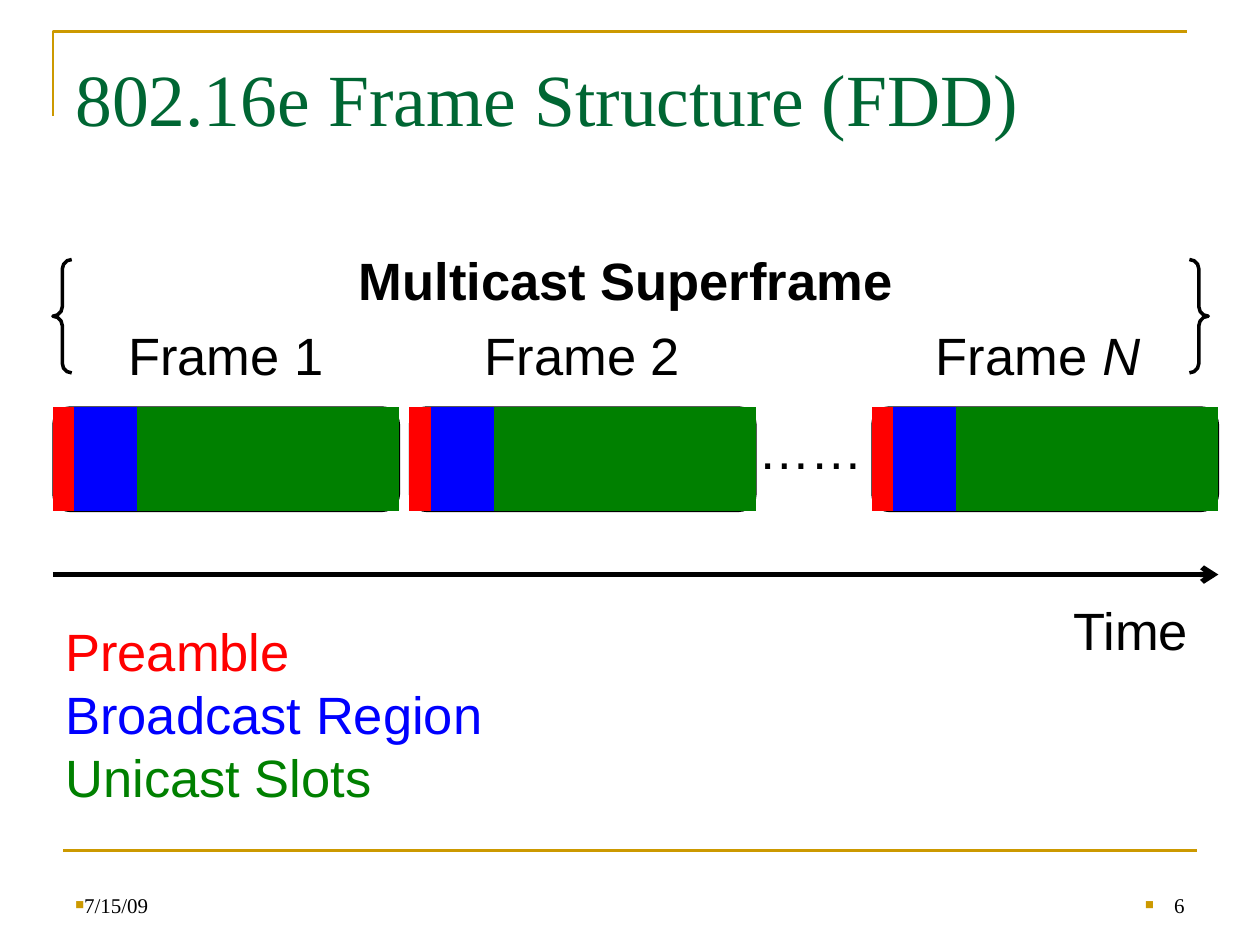
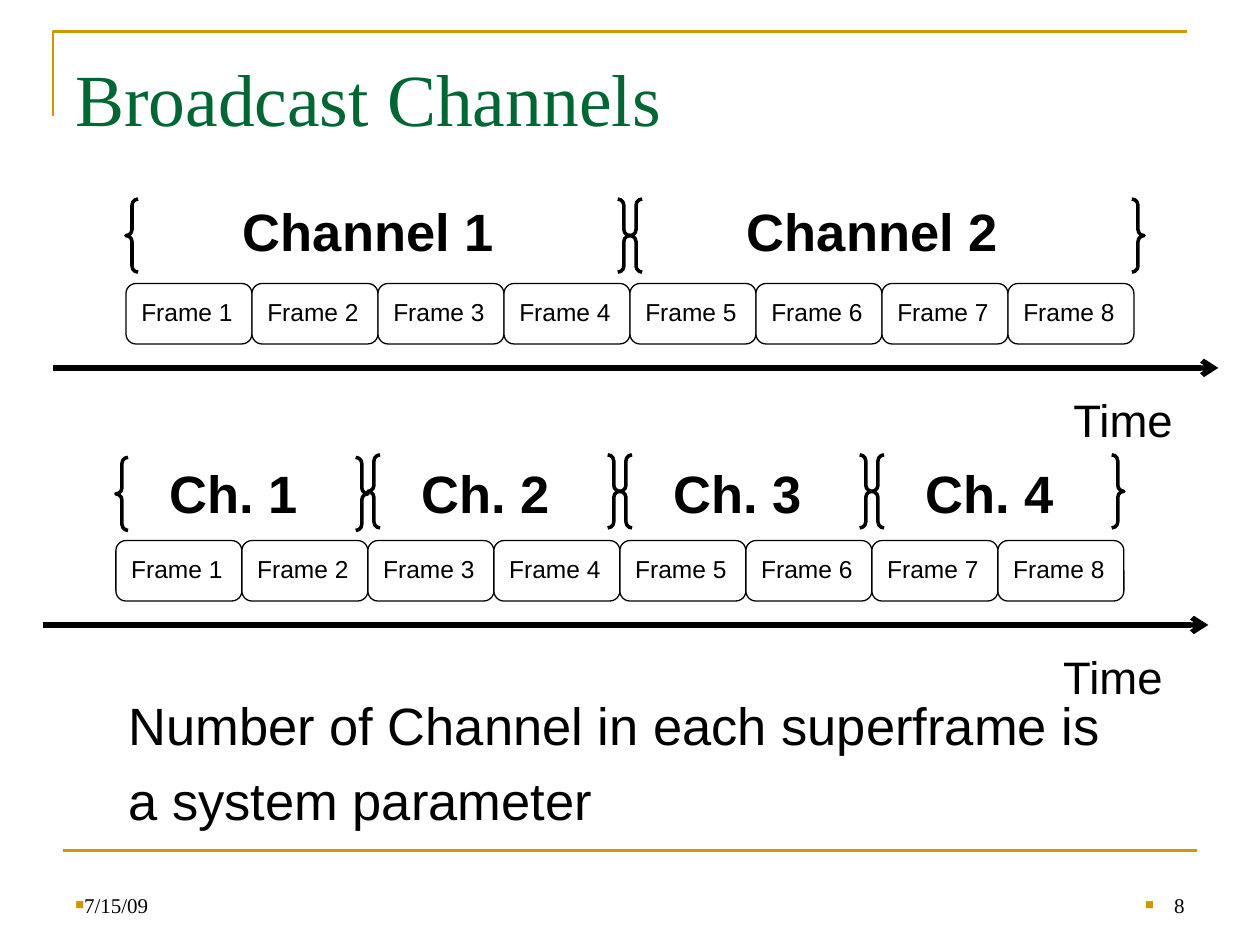
from lxml import etree
from pptx import Presentation
from pptx.dml.color import RGBColor
from pptx.enum.shapes import MSO_CONNECTOR, MSO_SHAPE
from pptx.enum.text import MSO_ANCHOR, MSO_AUTO_SIZE, PP_ALIGN
from pptx.oxml.ns import qn
from pptx.util import Inches, Pt

STRAIGHT = MSO_CONNECTOR.STRAIGHT
BLOCK = MSO_SHAPE.FLOWCHART_PROCESS
ROUNDED = MSO_SHAPE.FLOWCHART_ALTERNATE_PROCESS
BRACES = MSO_SHAPE.DOUBLE_BRACE
LEFT, RIGHT = PP_ALIGN.LEFT, PP_ALIGN.RIGHT
TOP, BOTTOM = MSO_ANCHOR.TOP, MSO_ANCHOR.BOTTOM
FIT, NO_FIT = MSO_AUTO_SIZE.SHAPE_TO_FIT_TEXT, MSO_AUTO_SIZE.NONE

SANS, SERIF = "Arial", "Times New Roman"
BLACK, WHITE, GOLD, TITLE_GREEN = "000000", "FFFFFF", "CC9900", "006633"
RED, BLUE, GREEN = "FF0000", "0000FF", "008000"
DATE = "7/15/09"


def rgb(color):
    return RGBColor.from_string(color)


def write(tf, text, size=30, font=SANS, color=BLACK, bold=False, italic_tail="",
          align=LEFT, anchor=TOP, inset=0.08):
    """Fill a text frame, one paragraph a line; italic_tail ends the last line."""
    tf.vertical_anchor = anchor
    tf.margin_top = Inches(inset)
    lines = text.split("\n")
    for i, line in enumerate(lines):
        p = tf.add_paragraph() if i else tf.paragraphs[0]
        p.alignment = align
        if i:
            p.space_before = Pt(size * 0.23)
        parts = [(line, False)]
        if italic_tail and i == len(lines) - 1:
            parts.append((italic_tail, True))
        for part, italic in parts:
            r = p.add_run()
            r.text = part
            r.font.name, r.font.size = font, Pt(size)
            r.font.bold, r.font.italic = bold, italic
            r.font.color.rgb = rgb(color)


def add_bullet(p, hang):
    """Give a paragraph a small gold square, hang inches before its text."""
    pPr = p._p.get_or_add_pPr()
    pPr.set("marL", str(Inches(hang)))
    pPr.set("indent", str(-Inches(hang)))
    color = etree.SubElement(pPr, qn("a:buClr"))
    etree.SubElement(color, qn("a:srgbClr"), val=GOLD)
    etree.SubElement(pPr, qn("a:buSzPct"), val="70000")
    etree.SubElement(pPr, qn("a:buFont"), typeface=SANS)
    etree.SubElement(pPr, qn("a:buChar"), char="■")


class Deck:
    """Holds the presentation, its shared style and the current slide."""

    def __init__(self):
        self.prs = Presentation()
        self.prs.slide_width, self.prs.slide_height = Inches(10), Inches(7.5)
        self.s = None

    def new_slide(self, title, number):
        self.s = self.prs.slides.add_slide(self.prs.slide_layouts[6])
        self.corner()
        self.line(0.5, 9.5, 6.75, GOLD, 1.5)
        self.text(title, 0.5, 0.3, 9, 1.25, wrap=True, size=42, font=SERIF,
                  color=TITLE_GREEN, inset=0.12)
        for text, x, align, hang in ((DATE, 0.5, LEFT, 0),
                                     (number, 7.17, RIGHT, 0.23)):
            sp = self.text(text, x, 6.83, 2.33, 0.5, wrap=True, size=12,
                           font=SERIF, align=align, anchor=BOTTOM)
            add_bullet(sp.text_frame.paragraphs[0], hang)

    def corner(self):
        fb = self.s.shapes.build_freeform(Inches(0.42), Inches(0.92))
        fb.add_line_segments([(Inches(0.42), Inches(0.25)),
                              (Inches(9.42), Inches(0.25))], close=False)
        self.paint(fb.convert_to_shape(), None, GOLD, 1.5)

    def paint(self, sp, fill, line, width):
        sp.shadow.inherit = False
        if fill:
            sp.fill.solid()
            sp.fill.fore_color.rgb = rgb(fill)
        else:
            sp.fill.background()
        if line:
            sp.line.color.rgb = rgb(line)
            sp.line.width = Pt(width)
        else:
            sp.line.fill.background()

    def shape(self, kind, x, y, w, h, fill=None, line=None, width=0.75):
        sp = self.s.shapes.add_shape(kind, Inches(x), Inches(y), Inches(w), Inches(h))
        self.paint(sp, fill, line, width)
        return sp

    def text(self, text, x, y, w, h=0.61, wrap=False, **fmt):
        sp = self.s.shapes.add_textbox(Inches(x), Inches(y), Inches(w), Inches(h))
        sp.text_frame.word_wrap = wrap
        sp.text_frame.auto_size = NO_FIT if wrap else FIT
        write(sp.text_frame, text, **fmt)
        return sp

    def line(self, x1, x2, y, color, width, arrow=False):
        c = self.s.shapes.add_connector(STRAIGHT, Inches(x1), Inches(y),
                                        Inches(x2), Inches(y))
        c.line.color.rgb = rgb(color)
        c.line.width = Pt(width)
        if arrow:
            etree.SubElement(c.line._get_or_add_ln(), qn("a:tailEnd"), type="arrow")
        etree.SubElement(c._element.spPr, qn("a:effectLst"))

    def braces(self, x, y, w, h=0.58):
        self.shape(BRACES, x, y, w, h, line=BLACK, width=2)

    def time_axis(self, x, y):
        self.line(x, x + 9.25, y, BLACK, 3, arrow=True)

    def radio_frame(self, x, y=3.23, h=0.83):
        """Draw a frame split into preamble, broadcast region and unicast slots."""
        self.shape(ROUNDED, x, y, 2.75, h, WHITE, BLACK)
        for offset, w, color in ((0, 0.17, RED), (0.17, 0.5, BLUE), (0.67, 2.08, GREEN)):
            self.shape(BLOCK, x + offset, y, w, h, color)

    def frame_row(self, x, y, count=8):
        """Draw a row of numbered frames with its time axis below."""
        for i in range(count):
            sp = self.shape(ROUNDED, x + i, y, 1, 0.48, WHITE, BLACK)
            write(sp.text_frame, f"Frame {i + 1}", size=14)
        self.time_axis(x - 0.58, y + 0.67)
        self.text("Time", x + 7.42, y + 0.78, 1, 0.54, size=26)


def frame_structure(deck):
    deck.new_slide("802.16e Frame Structure (FDD)", "6")
    for x in (0.42, 3.25, 6.92):
        deck.radio_frame(x)
    deck.text("……", 5.92, 3.23, 1.04)
    deck.text("Frame 1", 0.92, 2.48, 1.77)
    deck.text("Frame 2", 3.75, 2.48, 1.77)
    deck.text("Frame ", 7.33, 2.48, 1.92, italic_tail="N")
    deck.braces(0.42, 2.06, 9.17, 0.9)
    deck.text("Multicast Superframe", 2.75, 1.89, 4.48, bold=True)
    deck.time_axis(0.42, 4.56)
    deck.text("Time", 8.42, 4.67, 1.12)
    legend = (("Preamble", 2, RED), ("Broadcast Region", 3.55, BLUE),
              ("Unicast Slots", 2.66, GREEN))
    for i, (label, w, color) in enumerate(legend):
        deck.text(label, 0.42, 4.83 + i * 0.5, w, color=color)


def broadcast_channels(deck):
    deck.new_slide("Broadcast Channels", "8")
    deck.frame_row(1, 2.25)
    for i, brace_width in enumerate((4, 4.08)):
        deck.text(f"Channel {i + 1}", 1.83 + 4 * i, 1.5, 2.21, bold=True)
        deck.braces(1 + 4 * i, 1.58, brace_width)
    deck.frame_row(0.92, 4.29)
    for i, brace_top in enumerate((3.63, 3.61, 3.61, 3.61)):
        deck.text(f"Ch. {i + 1}", 1.25 + 2 * i, 3.58, 1.23, bold=True)
        deck.braces(0.92 + 2 * i, brace_top, 2)
    deck.text("Number of Channel in each superframe is\na system parameter",
              0.92, 5.42, 7.99, 1.21)


def main():
    deck = Deck()
    frame_structure(deck)
    broadcast_channels(deck)
    deck.prs.save("out.pptx")


if __name__ == "__main__":
    main()
